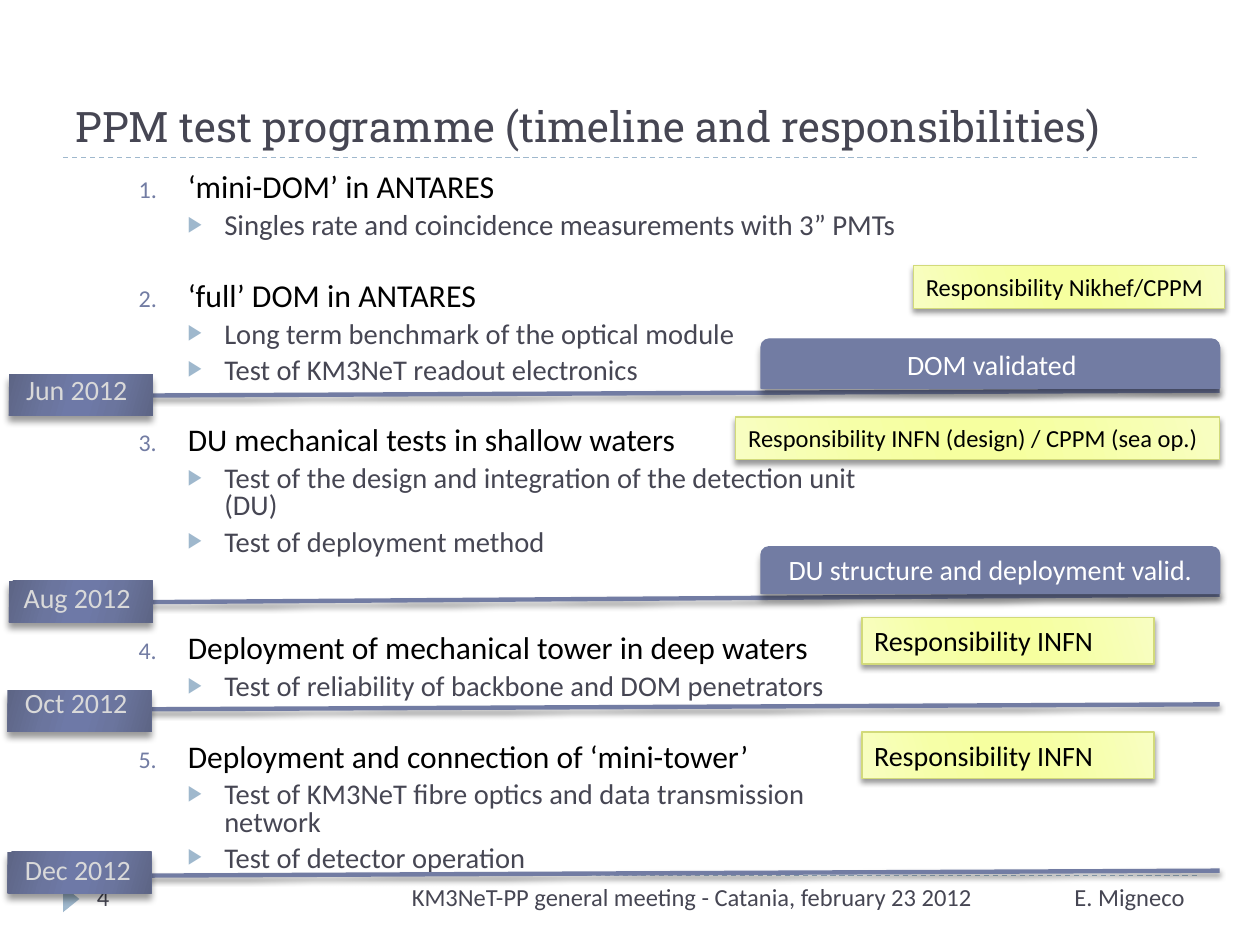
from lxml.etree import SubElement
from pptx import Presentation
from pptx.dml.color import RGBColor
from pptx.enum.dml import MSO_LINE
from pptx.enum.shapes import MSO_CONNECTOR, MSO_SHAPE
from pptx.enum.text import MSO_ANCHOR, MSO_AUTO_SIZE, PP_ALIGN
from pptx.oxml.ns import qn
from pptx.util import Inches, Pt

COLORS = {"ink": "464653", "black": "000000", "white": "FFFFFF", "date": "D9D9D9",
          "navy": "727CA3", "sky": "9FB8CD", "lime": "D2DA7A"}
YELLOW = ("F8FEC2", "F6FFA7", "F6FF9F")
SLATE = ("5D6585", "6B759E", "6E79A7")
SOFT, DEEP = (3, 2), (4, 3.4)

PROGRAMME = [
    ("‘mini-DOM’ in ANTARES", 18.2, 6, 16.5,
     ["Singles rate and coincidence measurements with 3” PMTs"]),
    ("‘full’ DOM in ANTARES", 18.2, 24, 16.3,
     ["Long term benchmark of the optical module", "Test of KM3NeT readout electronics"]),
    ("DU mechanical tests in shallow waters", 18, 24, 16.3,
     ["Test of the design and integration of the detection unit (DU)",
      "Test of deployment method"]),
    ("Deployment of mechanical tower in deep waters", 18, 44.5, 16.3,
     ["Test of reliability of backbone and DOM penetrators"]),
    ("Deployment and connection of ‘mini-tower’", 18, 24, 16.3,
     ["Test of KM3NeT fibre optics and data transmission network",
      "Test of detector operation"]),
]
MILESTONES = [
    ("Jun 2012", 3.14, 3.1, (0.07, 2.97), (0.11, 2.91)),
    ("Aug 2012", 4.78, 4.72, (0.07, 4.61), (0.09, 4.56)),
    ("Oct 2012", 5.63, 5.59, (0.06, 5.48), (0.1, 5.39)),
    ("Dec 2012", 6.95, 6.91, (0.06, 6.76), (0.1, 6.72)),
]
RESPONSIBILITIES = [
    ("Responsibility Nikhef/CPPM", (7.25, 2.11, 2.47, 0.34), 14),
    ("Responsibility INFN (design) / CPPM (sea op.)", (5.84, 3.31, 3.84, 0.34), 14),
    ("Responsibility INFN", (6.84, 4.9, 2.32, 0.37), 16),
    ("Responsibility INFN", (6.84, 5.81, 2.32, 0.37), 16),
]


def rgb(name):
    return RGBColor.from_string(COLORS[name])


def place(shape, area):
    shape.left, shape.top, shape.width, shape.height = map(Inches, area)


def style(paragraph, size, color, face="Calibri"):
    font = paragraph.font
    font.size, font.name = Pt(size), face
    font.color.rgb = rgb(color)


def add_effects(shape, shadow=None):
    properties = shape._element.spPr
    effects = properties.find(qn("a:effectLst"))
    if effects is None:
        effects = SubElement(properties, qn("a:effectLst"))
    if shadow:
        blur, distance = shadow
        outer = SubElement(effects, qn("a:outerShdw"), blurRad=str(Pt(blur)),
                           dist=str(Pt(distance)), dir="5400000", rotWithShape="0")
        tint = SubElement(outer, qn("a:srgbClr"), val=COLORS["black"])
        SubElement(tint, qn("a:alpha"), val="40000")


def add_line(page, start, end, color, width, dashed=False, shadow=None):
    line = page.shapes.add_connector(MSO_CONNECTOR.STRAIGHT, *map(Inches, start + end))
    line.line.color.rgb = rgb(color)
    line.line.width = Pt(width)
    if dashed:
        line.line.dash_style = MSO_LINE.DASH
    add_effects(line, shadow)


def add_box(page, kind, area, fill=None, outline=None, shadow=None):
    box = page.shapes.add_shape(kind, *map(Inches, area))
    box.shadow.inherit = False
    if fill:
        box.fill.solid()
        box.fill.fore_color.rgb = rgb(fill)
    if outline:
        box.line.color.rgb = rgb(outline)
        box.line.width = Pt(0.75)
    else:
        box.line.fill.background()
    add_effects(box, shadow)
    return box


def shade(box, tones):
    """Fill a box with a symmetric gradient from edge, middle and centre tones."""
    box.fill.gradient()
    box.fill.gradient_angle = 344
    stops = box._element.spPr.find(".//" + qn("a:gsLst"))
    stops.clear()
    for position, tone in zip((0, 30, 45, 55, 73, 100), tones + tones[::-1]):
        stop = SubElement(stops, qn("a:gs"), pos=str(position * 1000))
        SubElement(stop, qn("a:srgbClr"), val=tone)


def add_text(page, text, area, size, color, align=PP_ALIGN.LEFT, wrap=True):
    frame = page.shapes.add_textbox(*map(Inches, area)).text_frame
    frame.word_wrap = wrap
    paragraph = frame.paragraphs[0]
    paragraph.text, paragraph.alignment = text, align
    style(paragraph, size, color)


def add_item(paragraph, text, level, size, before):
    paragraph.text, paragraph.level = text, level
    paragraph.line_spacing, paragraph.space_before = 0.8, Pt(before)
    paragraph.space_after = Pt(0)
    margin, indent = ((0.39, -0.39), (0.68, -0.29))[level]
    properties = paragraph._p.get_or_add_pPr()
    properties.set("marL", str(Inches(margin)))
    properties.set("indent", str(Inches(indent)))
    tint = SubElement(properties, qn("a:buClr"))
    SubElement(tint, qn("a:srgbClr"), val=COLORS[("navy", "sky")[level]])
    SubElement(properties, qn("a:buSzPct"), val="76000")
    if level:
        SubElement(properties, qn("a:buChar"), char="▶")
    else:
        SubElement(properties, qn("a:buAutoNum"), type="arabicPeriod")
    style(paragraph, size, ("black", "ink")[level])


def fill_title(page):
    title = page.shapes.title
    place(title, (0.5, 0.25, 9, 1))
    frame = title.text_frame
    frame.auto_size, frame.vertical_anchor = MSO_AUTO_SIZE.NONE, MSO_ANCHOR.BOTTOM
    paragraph = frame.paragraphs[0]
    paragraph.text = "PPM test programme (timeline and responsibilities)"
    paragraph.alignment = PP_ALIGN.LEFT
    style(paragraph, 24, "ink", "Roboto Slab")


def fill_programme(page):
    body = page.placeholders[1]
    place(body, (1, 1.33, 6.25, 5.62))
    frame = body.text_frame
    frame.auto_size = MSO_AUTO_SIZE.NONE
    paragraph = frame.paragraphs[0]
    for heading, size, before, detail_size, details in PROGRAMME:
        if paragraph.text:
            paragraph = frame.add_paragraph()
        add_item(paragraph, heading, 0, size, before)
        for detail in details:
            add_item(frame.add_paragraph(), detail, 1, detail_size, 5)


def add_frame(page):
    for top in (6.95, 1.25):
        add_line(page, (0.5, top), (9.5, top), "sky", 0.75, dashed=True)
    marker = add_box(page, MSO_SHAPE.ISOSCELES_TRIANGLE, (0.46, 7.07, 0.21, 0.13), "sky")
    marker.rotation = 90
    add_text(page, "KM3NeT-PP general meeting - Catania, february 23 2012",
             (3.17, 6.95, 4.73, 0.4), 14, "ink")
    add_text(page, "4", (0.67, 6.95, 2.17, 0.4), 14, "ink")
    add_text(page, "E. Migneco", (7.9, 6.95, 1.6, 0.4), 14, "ink", PP_ALIGN.RIGHT)


def add_result(page, text, area, text_area, align, wrap):
    add_box(page, MSO_SHAPE.ROUND_2_SAME_RECTANGLE, area, "navy", "navy", DEEP)
    add_text(page, text, text_area, 16, "white", align, wrap)


def add_responsibility(page, text, area, size):
    box = add_box(page, MSO_SHAPE.RECTANGLE, area, outline="lime", shadow=SOFT)
    shade(box, YELLOW)
    box._element.spPr.xfrm.set("flipH", "1")
    frame = box.text_frame
    frame.word_wrap, frame.vertical_anchor = True, MSO_ANCHOR.TOP
    paragraph = frame.paragraphs[0]
    paragraph.text, paragraph.alignment = text, PP_ALIGN.LEFT
    style(paragraph, size, "black")


def main():
    deck = Presentation()
    deck.slide_width, deck.slide_height = Inches(10), Inches(7.5)
    page = deck.slides.add_slide(deck.slide_layouts[1])
    add_frame(page)
    fill_title(page)
    fill_programme(page)
    for _, start, end, _, _ in MILESTONES:
        add_line(page, (1, start), (9.68, end), "navy", 2.5, shadow=SOFT)
    add_result(page, "DOM validated", (6.04, 2.69, 3.64, 0.39),
               (7.1, 2.71, 1.59, 0.37), PP_ALIGN.LEFT, False)
    valid_area = (6.04, 4.34, 3.64, 0.37)
    add_result(page, "DU structure and deployment valid.", valid_area, valid_area,
               PP_ALIGN.CENTER, True)
    for text, area, size in RESPONSIBILITIES:
        add_responsibility(page, text, area, size)
    for date, _, _, tag_corner, text_corner in MILESTONES:
        tag = add_box(page, MSO_SHAPE.RECTANGLE, tag_corner + (1.14, 0.33), shadow=DEEP)
        shade(tag, SLATE)
        add_text(page, date, text_corner + (1.07, 0.37), 16, "date", wrap=False)
    deck.save("out.pptx")


if __name__ == "__main__":
    main()
